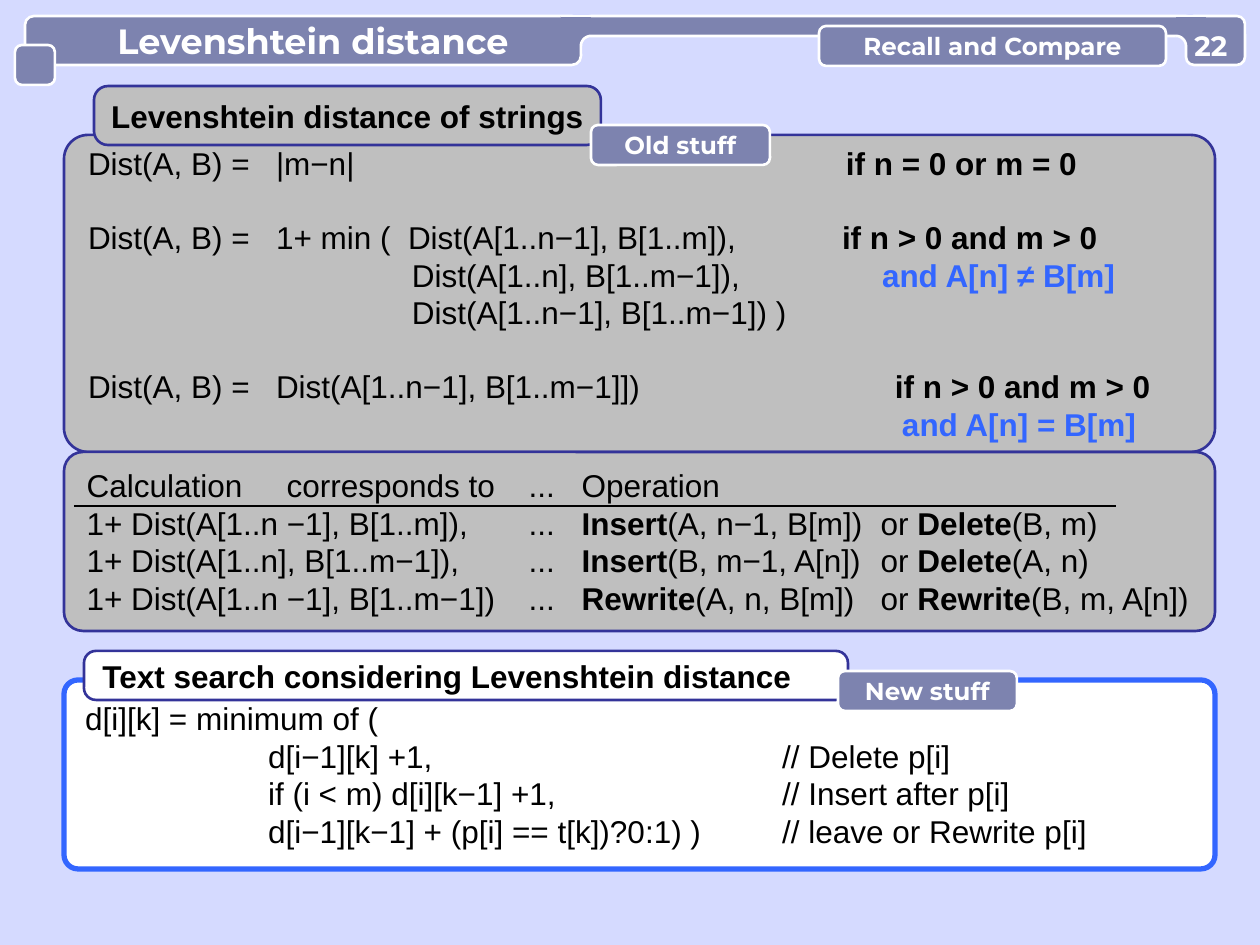
import math

from lxml import etree
from pptx import Presentation
from pptx.dml.color import RGBColor
from pptx.enum.shapes import MSO_CONNECTOR, MSO_SHAPE
from pptx.enum.text import MSO_ANCHOR, MSO_AUTO_SIZE, PP_ALIGN
from pptx.oxml.ns import qn
from pptx.util import Pt

ROUNDED, RECTANGLE = MSO_SHAPE.ROUNDED_RECTANGLE, MSO_SHAPE.RECTANGLE
LEFT, CENTER = PP_ALIGN.LEFT, PP_ALIGN.CENTER
STRAIGHT = MSO_CONNECTOR.STRAIGHT

EMU_PER_PX = 914400 / 126
PAGE, SLATE, GRAY = "D5DAFF", "7D83AF", "BFBFBF"
NAVY, BLUE, WHITE, BLACK = "333399", "3366FF", "FFFFFF", "000000"
BODY = {"name": "Arial", "size": Pt(18), "bold": False}
HEADING = {**BODY, "bold": True}
LABEL = {"name": "Montserrat", "size": Pt(14), "bold": True}
TITLE = {**LABEL, "size": Pt(20)}
NUMBER = {**LABEL, "size": Pt(16)}
BLANK_LINE = 20.7  # points, one line of body text

# Each line: tab stops in px, text (*bold*), colour of the bold part, points before
DEFINITION = [
    ([188, 758], "Dist(A, B) =\t|m−n|\t*if n = 0 or m = 0*", BLACK, 0),
    ([188, 320, 754],
     "Dist(A, B) =\t1+ min (\tDist(A[1..n−1], B[1..m]),\t*if n > 0 and m > 0*", BLACK, BLANK_LINE),
    ([324, 794], "\tDist(A[1..n], B[1..m−1]),\t*and A[n] ≠ B[m]*", BLUE, 0),
    ([324], "\tDist(A[1..n−1], B[1..m−1]) )", BLACK, 0),
    ([188, 807],
     "Dist(A, B) =\tDist(A[1..n−1], B[1..m−1]])\t*if n > 0 and m > 0*", BLACK, BLANK_LINE),
    ([814], "\t*and A[n] = B[m]*", BLUE, 0),
]
OPERATION_STOPS = [442, 495, 794]
OPERATIONS = [
    ([200, 442, 495], "Calculation\tcorresponds to\t...\tOperation", BLACK, 0),
    (OPERATION_STOPS,
     "1+ Dist(A[1..n −1], B[1..m]),\t...\t*Insert*(A, n−1, B[m])\tor *Delete*(B, m)", BLACK, 0),
    (OPERATION_STOPS,
     "1+ Dist(A[1..n], B[1..m−1]),\t...\t*Insert*(B, m−1, A[n])\tor *Delete*(A, n)", BLACK, 0),
    (OPERATION_STOPS,
     "1+ Dist(A[1..n −1], B[1..m−1])\t...\t*Rewrite*(A, n, B[m])\tor *Rewrite*(B, m, A[n])", BLACK, 0),
]
SEARCH_STOPS = [183, 697]
SEARCH = [
    ([], "d[i][k] = minimum of (", BLACK, 0),
    (SEARCH_STOPS, "\td[i−1][k] +1,\t// Delete p[i]", BLACK, 0),
    (SEARCH_STOPS, "\tif (i < m) d[i][k−1] +1,\t// Insert after p[i]", BLACK, 0),
    (SEARCH_STOPS, "\td[i−1][k−1] + (p[i] == t[k])?0:1) )\t// leave or Rewrite p[i]", BLACK, 0),
]


def px(length):
    return round(length * EMU_PER_PX)


def rgb(color):
    return RGBColor.from_string(color)


def paint(shape, fill=None, line=None, weight=1.5):
    shape.shadow.inherit = False
    if fill:
        shape.fill.solid()
        shape.fill.fore_color.rgb = rgb(fill)
    else:
        shape.fill.background()
    if line:
        shape.line.color.rgb = rgb(line)
        shape.line.width = Pt(weight)
    else:
        shape.line.fill.background()


def add_panel(slide, at, radius, fill=SLATE, line=WHITE, weight=1.5):
    kind = ROUNDED if radius else RECTANGLE
    panel = slide.shapes.add_shape(kind, *map(px, at))
    if radius:
        panel.adjustments[0] = radius / min(at[2:])
    paint(panel, fill, line, weight)
    return panel


def prepare_frame(shape, inset=0):
    frame = shape.text_frame
    settings = {"word_wrap": True, "auto_size": MSO_AUTO_SIZE.NONE,
                "vertical_anchor": MSO_ANCHOR.MIDDLE, "margin_left": px(inset),
                "margin_right": 0, "margin_top": 0, "margin_bottom": 0}
    for key, value in settings.items():
        setattr(frame, key, value)
    return frame


def add_run(paragraph, text, style, color):
    run = paragraph.add_run()
    run.text = text
    for key, value in style.items():
        setattr(run.font, key, value)
    run.font.color.rgb = rgb(color)


def write_line(shape, text, style, color=WHITE, align=CENTER, inset=0):
    paragraph = prepare_frame(shape, inset).paragraphs[0]
    paragraph.alignment = align
    add_run(paragraph, text, style, color)


def write_formulas(shape, lines):
    frame = prepare_frame(shape, 17)
    for index, (stops, text, bold_color, before) in enumerate(lines):
        paragraph = frame.add_paragraph() if index else frame.paragraphs[0]
        paragraph.alignment = LEFT
        paragraph.space_before = Pt(before)
        if stops:
            tabs = etree.SubElement(paragraph._p.get_or_add_pPr(), qn("a:tabLst"))
            for stop in stops:
                etree.SubElement(tabs, qn("a:tab"), pos=str(px(stop)), algn="l")
        for part, words in enumerate(text.split("*")):
            if words:
                bold = part % 2 == 1
                add_run(paragraph, words, HEADING if bold else BODY, bold_color if bold else BLACK)


def add_line(slide, start, end, color, weight):
    line = slide.shapes.add_connector(STRAIGHT, *map(px, start + end))
    line.line.color.rgb = rgb(color)
    line.line.width = Pt(weight)
    etree.SubElement(line._element.spPr, qn("a:effectLst"))


def add_outline(slide, points, closed):
    points = [(px(x), px(y)) for x, y in points]
    builder = slide.shapes.build_freeform(*points[0])
    builder.add_line_segments(points[1:], close=closed)
    return builder.convert_to_shape()


def add_joint(slide, left, center_x, side):
    """Bridge the thin bar and a header block with an inward rounded corner."""
    add_panel(slide, (left, 16, 30, 30), 0, line=None)
    add_line(slide, (left, 16), (left + 30, 16), WHITE, 1.5)
    center, radius, steps = (center_x, 46), 10, 12
    angles = [math.pi / 2 * step / steps for step in range(steps + 1)]
    arc = [(center_x + side * radius * math.sin(a), 46 - radius * math.cos(a)) for a in angles]
    paint(add_outline(slide, arc + [center], True), fill=PAGE)
    paint(add_outline(slide, arc, False), line=WHITE)


def add_label(slide, at, text):
    write_line(add_panel(slide, at, 7), text, LABEL)


def add_header(slide):
    add_panel(slide, (25, 16, 556, 49), 9)
    add_panel(slide, (581, 16, 615, 20), 10)
    add_joint(slide, 561, 591, -1)
    add_panel(slide, (15, 45, 40, 40), 7)
    add_panel(slide, (1186, 16, 59, 49), 8)
    add_joint(slide, 1176, 1176, 1)
    add_label(slide, (819, 26, 347, 40), "Recall and Compare")
    number = slide.shapes.add_textbox(*map(px, (1186, 28, 50, 34)))
    write_line(number, "22", NUMBER)

    # Title sits on the header block
    title = slide.shapes.title
    title.left, title.top, title.width, title.height = map(px, (35, 16, 556, 49))
    write_line(title, "Levenshtein distance", TITLE)
    slide.shapes._spTree.append(title._element)


def main():
    prs = Presentation()
    prs.slide_width, prs.slide_height = px(1260), px(945)
    slide = prs.slides.add_slide(prs.slide_layouts[5])
    slide.background.fill.solid()
    slide.background.fill.fore_color.rgb = rgb(PAGE)

    # Distance of strings
    write_formulas(add_panel(slide, (64, 135, 1151, 317), 24, GRAY, NAVY), DEFINITION)
    heading = add_panel(slide, (94, 86, 507, 59), 14, GRAY, NAVY)
    write_line(heading, "Levenshtein distance of strings", HEADING, BLACK)

    add_header(slide)

    # Text search
    write_formulas(add_panel(slide, (64, 680, 1151, 189), 14, WHITE, BLUE, 3), SEARCH)
    heading = add_panel(slide, (84, 651, 764, 49), 12, WHITE, NAVY)
    write_line(heading, "Text search considering Levenshtein distance", HEADING, BLACK, LEFT, 15)

    # Matching operations
    write_formulas(add_panel(slide, (64, 452, 1151, 179), 19, GRAY, NAVY), OPERATIONS)
    add_line(slide, (74, 506), (1116, 506), BLACK, 0.75)

    # Stuff labels
    add_label(slide, (591, 125, 179, 40), "Old stuff")
    add_label(slide, (838, 671, 179, 40), "New stuff")

    prs.save("out.pptx")


if __name__ == "__main__":
    main()
